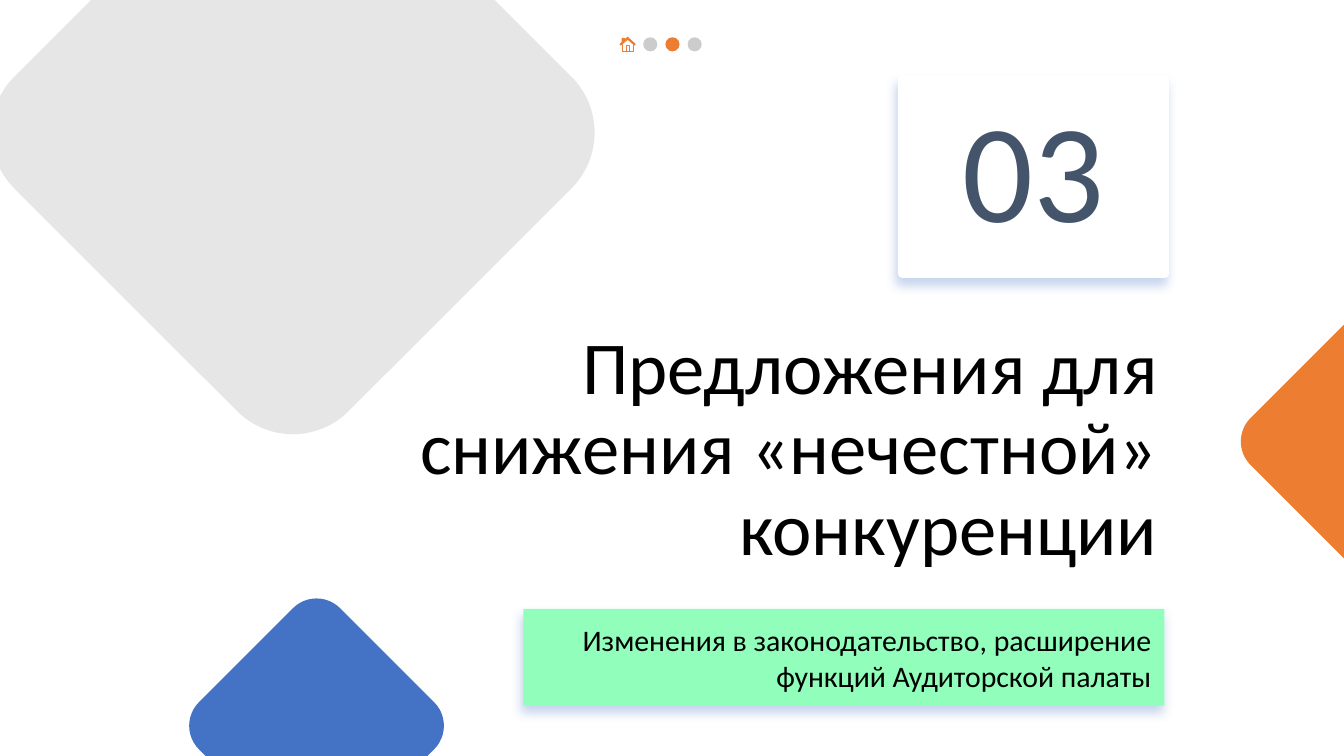
from lxml.etree import SubElement
from pptx import Presentation
from pptx.dml.color import RGBColor
from pptx.enum.shapes import MSO_SHAPE as Preset
from pptx.enum.text import MSO_ANCHOR as Anchor, PP_ALIGN as Align
from pptx.oxml.ns import qn
from pptx.util import Pt

PX = 9144
BLUE, ORANGE, WHITE = "4472C4", "ED7D31", "FFFFFF"
rgb = RGBColor.from_string


def add_preset(preset, box, fill, opacity=100):
    shape = slide.shapes.add_shape(preset, *[n * PX for n in box])
    shape.shadow.inherit = False
    shape.fill.solid()
    shape.fill.fore_color.rgb = rgb(fill)
    shape.line.fill.background()
    if opacity < 100:
        colour = shape.element.spPr.find(qn("a:solidFill"))[0]
        SubElement(colour, qn("a:alpha"), val=str(opacity * 1000))
    return shape


def write_text(shape, text, size, colour, align, anchor, spacing):
    frame = shape.text_frame
    frame.word_wrap = True
    frame.vertical_anchor = anchor
    frame.margin_left = frame.margin_right = 13 * PX
    frame.margin_top = frame.margin_bottom = 13 * PX
    paragraph = frame.paragraphs[0]
    paragraph.text = text
    paragraph.alignment = align
    paragraph.line_spacing = spacing
    paragraph.font.name = "Calibri"
    paragraph.font.size = Pt(size)
    paragraph.font.color.rgb = rgb(colour)


deck = Presentation()
deck.slide_width, deck.slide_height = 1333 * PX, 750 * PX
slide = deck.slides.add_slide(deck.slide_layouts[6])

for left, top, side, fill in [(215, 621, 198, BLUE), (1258, 339, 198, ORANGE)]:
    add_preset(Preset.ROUNDED_RECTANGLE, (left, top, side, side), fill).rotation = 315

number_card = add_preset(Preset.RECTANGLE, (895, 79, 260, 193), WHITE)
number_card.line.color.rgb = rgb(WHITE)
number_card.line.width = Pt(6)
write_text(number_card, "03", 100, "44546A", Align.CENTER, Anchor.MIDDLE, 0.9)

summary_card = add_preset(Preset.RECTANGLE, (519, 604, 636, 96), "91FFBB")
write_text(summary_card, "Изменения в законодательство, расширение функций Аудиторской палаты",
           21.3, "000000", Align.RIGHT, Anchor.TOP, 1.0)

for card in (number_card, summary_card):
    effects = card.element.spPr.find(qn("a:effectLst"))
    shadow = SubElement(effects, qn("a:outerShdw"), blurRad=str(Pt(7.9)), dist=str(Pt(5.2)),
                        dir=str(110 * 60000), algn="ctr", rotWithShape="0")
    shadow_colour = SubElement(shadow, qn("a:srgbClr"), val=BLUE)
    SubElement(shadow_colour, qn("a:alpha"), val="30000")

heading = slide.shapes.add_textbox(299 * PX, 296 * PX, 862 * PX, 284 * PX)
write_text(heading, "Предложения для снижения «нечестной» конкуренции",
           53.3, "000000", Align.RIGHT, Anchor.BOTTOM, 0.9)

for step, (fill, opacity) in enumerate([("B0B0B0", 64), (ORANGE, 100), ("B0B0B0", 64)]):
    add_preset(Preset.OVAL, (638 + 22 * step, 37, 14, 14), fill, opacity)

roof = [(0, 69), (75, 0), (150, 69), (143, 76), (75, 19), (7, 76)]
chimney = [(22, 10), (45, 10), (45, 25), (22, 44)]
walls = [(22, 72), (22, 142), (130, 142), (130, 72)]
door = [(60, 142), (60, 82), (90, 82), (90, 142)]
house = slide.shapes.build_freeform(*roof[0], scale=PX / 10)
house.add_line_segments(roof[1:], close=True)
for outline in (chimney, walls + walls[-2:0:-1], door + door[-2:0:-1]):
    house.move_to(*outline[0])
    house.add_line_segments(outline[1:], close=True)
home_icon = house.convert_to_shape(615 * PX, 37 * PX)
home_icon.shadow.inherit = False
home_icon.fill.solid()
home_icon.fill.fore_color.rgb = rgb(ORANGE)
home_icon.line.color.rgb = rgb(ORANGE)
home_icon.line.width = Pt(0.75)

add_preset(Preset.ROUNDED_RECTANGLE, (56, -103, 469, 469), "E7E6E6").rotation = 315

deck.save("out.pptx")
